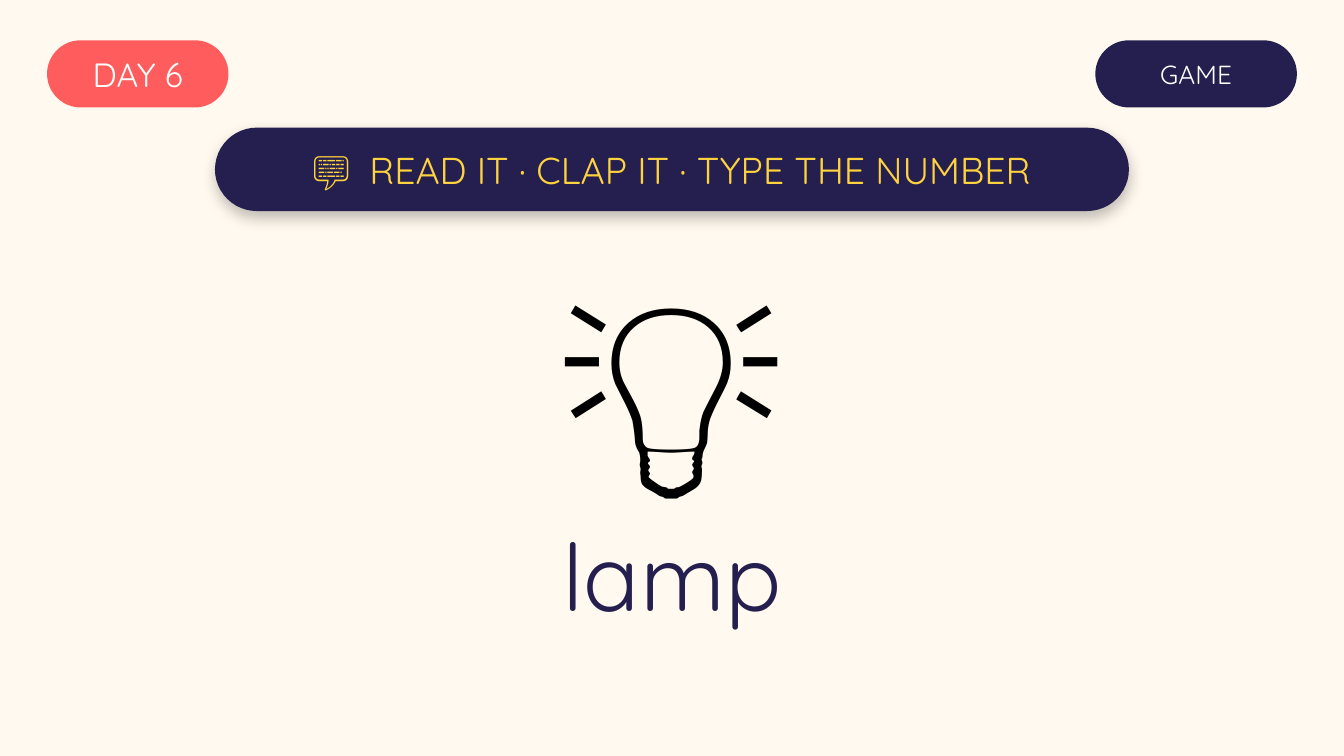
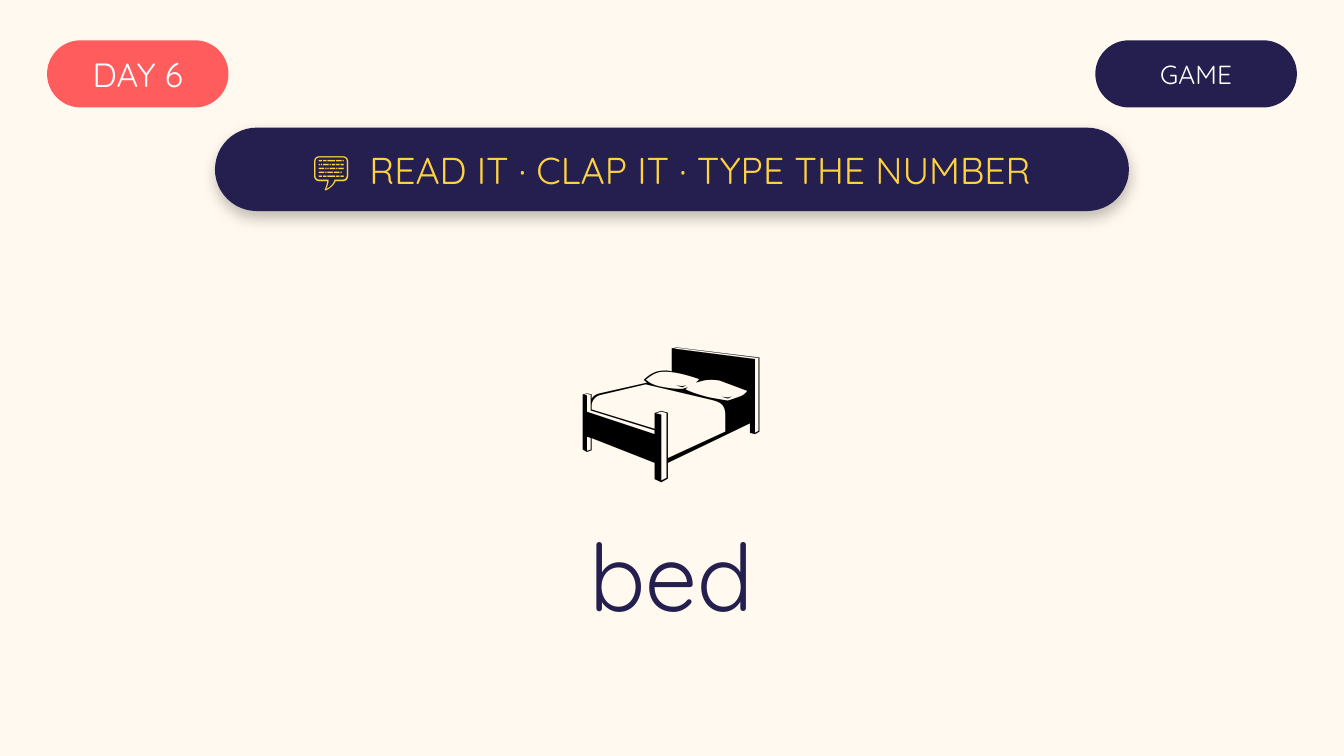
from lxml import etree
from pptx import Presentation
from pptx.dml.color import RGBColor
from pptx.enum.shapes import MSO_SHAPE
from pptx.enum.text import MSO_ANCHOR, PP_ALIGN
from pptx.oxml.ns import qn
from pptx.util import Inches, Pt

PILL = MSO_SHAPE.ROUNDED_RECTANGLE
MIDDLE = MSO_ANCHOR.MIDDLE
TOP = MSO_ANCHOR.TOP
CENTER = PP_ALIGN.CENTER

COLORS = {
    "cream": "FFF9EF",
    "coral": "FF5D5D",
    "navy": "241F4E",
    "yellow": "FFD23F",
    "white": "FFFFFF",
    "black": "000000",
}
HEADING_FONT = "Quicksand"
ICON_FONT = "Calibri"

DAY_BOX = (0.35, 0.3, 1.35, 0.5)
GAME_BOX = (8.15, 0.3, 1.5, 0.5)
PROMPT_BOX = (1.6, 0.95, 6.8, 0.62)
CARD_BOX = (0, 1.75, 10, 2.95)
ICON_HEIGHT = 1.8
WORD_HEIGHT = 0.85

NO_INSETS = {
    "margin_left": 0,
    "margin_top": 0,
    "margin_right": 0,
    "margin_bottom": 0,
}
PROMPT_ICON_SPACING = 2.5

WORD_CARDS = [("💡", "lamp"), ("🛏️", "bed")]


def color(name):
    return RGBColor.from_string(COLORS[name])


def apply_format(target, values):
    for attribute, value in values.items():
        setattr(target, attribute, value)


def add_label(slide, box, runs, size, ink, font=HEADING_FONT, anchor=MIDDLE, insets=None):
    label = slide.shapes.add_textbox(*map(Inches, box))
    frame_format = {"word_wrap": True, "vertical_anchor": anchor}
    apply_format(label.text_frame, frame_format | (insets or {}))
    line = label.text_frame.paragraphs[0]
    line.alignment = CENTER
    for text, spacing in runs:
        run = line.add_run()
        run.text = text
        apply_format(run.font, {"name": font, "size": Pt(size)})
        run.font.color.rgb = color(ink)
        if spacing:
            run.font._element.set("spc", str(int(spacing * 100)))


def add_soft_shadow(shape, blur=8, distance=3, angle=90, opacity=25):
    effects = shape._element.spPr.find(qn("a:effectLst"))
    shadow = etree.SubElement(effects, qn("a:outerShdw"), {
        "blurRad": str(Pt(blur)),
        "dist": str(Pt(distance)),
        "dir": str(angle * 60000),
        "algn": "ctr",
        "rotWithShape": "0",
    })
    tint = etree.SubElement(shadow, qn("a:srgbClr"), val=COLORS["black"])
    etree.SubElement(tint, qn("a:alpha"), val=str(opacity * 1000))


def add_pill(slide, box, runs, size, fill, ink):
    pill = slide.shapes.add_shape(PILL, *map(Inches, box))
    pill.adjustments[0] = 0.5
    pill.shadow.inherit = False
    pill.fill.solid()
    pill.fill.fore_color.rgb = color(fill)
    pill.line.fill.background()
    add_label(slide, box, runs, size, ink, insets=NO_INSETS)
    return pill


def add_header(slide):
    add_pill(slide, DAY_BOX, [("DAY 6", 0)], 18, "coral", "white")
    add_pill(slide, GAME_BOX, [("GAME", 0)], 14, "navy", "white")


def add_prompt(slide, box):
    prompt = [("💬 ", PROMPT_ICON_SPACING), ("READ IT · CLAP IT · TYPE THE NUMBER", 0)]
    banner = add_pill(slide, box, prompt, 20, "navy", "yellow")
    add_soft_shadow(banner)


def add_word_card(slide, box, icon, word):
    left, top, width, height = box
    icon_box = (left, top, width, ICON_HEIGHT)
    word_box = (left, top + height - WORD_HEIGHT, width, WORD_HEIGHT)
    add_label(slide, icon_box, [(icon, 0)], 119, "black", font=ICON_FONT, anchor=TOP)
    add_label(slide, word_box, [(word, 0)], 50, "navy")


def add_game_slide(deck, icon, word):
    slide = deck.slides.add_slide(deck.slide_layouts[6])
    slide.background.fill.solid()
    slide.background.fill.fore_color.rgb = color("cream")
    add_header(slide)
    add_prompt(slide, PROMPT_BOX)
    add_word_card(slide, CARD_BOX, icon, word)


def main():
    deck = Presentation()
    deck.slide_width = Inches(10)
    deck.slide_height = Inches(10 * 9 / 16)
    for icon, word in WORD_CARDS:
        add_game_slide(deck, icon, word)
    deck.save("out.pptx")


if __name__ == "__main__":
    main()
